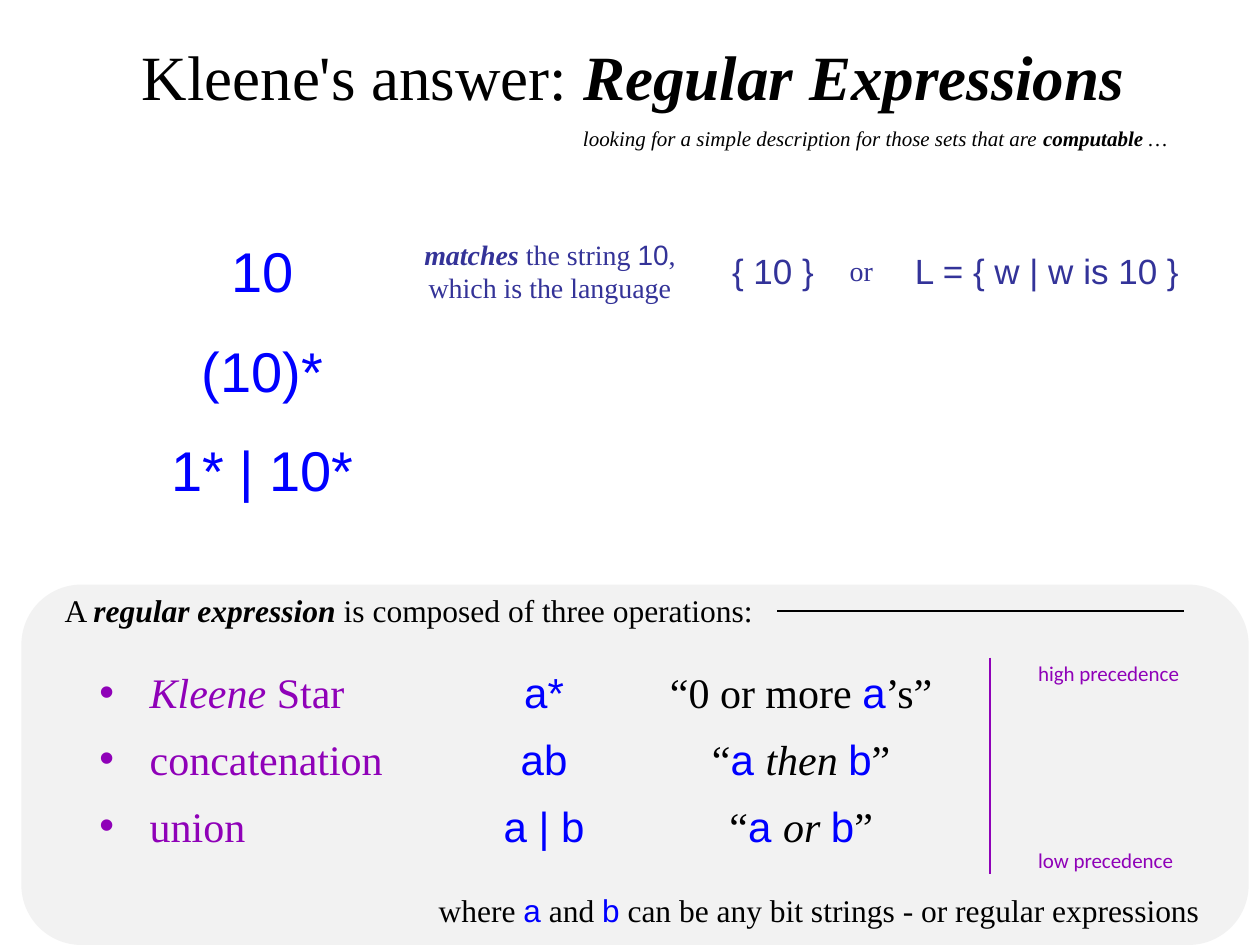
from lxml import etree
from pptx import Presentation
from pptx.dml.color import RGBColor
from pptx.enum.shapes import MSO_CONNECTOR, MSO_SHAPE
from pptx.enum.text import MSO_ANCHOR, MSO_AUTO_SIZE, PP_ALIGN
from pptx.oxml.ns import qn
from pptx.util import Inches, Pt

COLORS = {
    "panel": "F2F2F2",
    "text": "000000",
    "code": "0000FF",
    "operation": "8F01B8",
    "language": "333399",
    "match": "343398",
}
SERIF, SANS, LABEL = "Times New Roman", "Arial", "Calibri"

# style: (font, colour, bold, italic)
STYLES = {
    "plain": (SERIF, "text", False, False),
    "italic": (SERIF, "text", False, True),
    "strong": (SERIF, "text", True, True),
    "code": (SANS, "code", False, False),
    "operation": (SERIF, "operation", False, False),
    "operation italic": (SERIF, "operation", False, True),
    "precedence": (LABEL, "operation", False, False),
    "language": (SANS, "language", False, False),
    "match": (SERIF, "match", False, False),
    "match strong": (SERIF, "match", True, True),
    "match code": (SANS, "match", False, False),
}


def rgb(name):
    return RGBColor.from_string(COLORS[name])


def write(frame, pieces, size, align=PP_ALIGN.CENTER, anchor=MSO_ANCHOR.MIDDLE, wrap=True):
    """Fill a text frame with one paragraph of (text, style) pieces."""
    frame.word_wrap = wrap
    frame.auto_size = MSO_AUTO_SIZE.NONE
    frame.vertical_anchor = anchor
    paragraph = frame.paragraphs[0]
    paragraph.alignment = align
    for text, style in pieces:
        run = paragraph.add_run()
        run.text = text
        font = run.font
        font.name, color, font.bold, font.italic = STYLES[style]
        font.size = Pt(size)
        font.color.rgb = rgb(color)
    return paragraph


def add_text(slide, left, top, width, height, pieces, size, **layout):
    box = slide.shapes.add_textbox(Inches(left), Inches(top), Inches(width), Inches(height))
    return write(box.text_frame, pieces, size, **layout)


def add_rule(slide, start, end, color, weight):
    rule = slide.shapes.add_connector(MSO_CONNECTOR.STRAIGHT, *map(Inches, start + end))
    rule.line.color.rgb = rgb(color)
    rule.line.width = Pt(weight)
    etree.SubElement(rule._element.spPr, qn("a:effectLst"))


def add_bullet_and_tabs(paragraph, tabs):
    """Give a paragraph a bullet and tab stops of (position, alignment)."""
    properties = paragraph._p.get_or_add_pPr()
    properties.set("marL", "0")
    properties.set("indent", "0")
    etree.SubElement(properties, qn("a:buFont"), typeface=SANS)
    etree.SubElement(properties, qn("a:buChar"), char="•")
    stops = etree.SubElement(properties, qn("a:tabLst"))
    for position, alignment in tabs:
        etree.SubElement(stops, qn("a:tab"), pos=str(Inches(position)), algn=alignment)


def add_heading(slide, left, top):
    title = slide.shapes.title
    title.left, title.top = Inches(left), Inches(top)
    title.width, title.height = Inches(8.51), Inches(0.7)
    write(title.text_frame,
          [("Kleene's answer: ", "plain"), ("Regular Expressions", "strong")],
          36, anchor=MSO_ANCHOR.TOP)
    add_text(slide, left + 3.75, top + 0.7, 4.85, 0.3, [
        ("looking for a simple description for those sets that are ", "italic"),
        ("computable ", "strong"),
        ("…", "italic"),
    ], 12, wrap=False)


def add_examples(slide, left, top):
    """Place the column of expressions and the language of the first one."""
    for row, expression in enumerate(["10", "(10)*", "1* | 10*"]):
        add_text(slide, left, top + row * 0.79, 1.65, 0.63,
                 [(expression, "code")], 32, wrap=False)
    add_text(slide, left + 1.92, top, 2.37, 0.64, [
        ("matches", "match strong"),
        (" the string ", "match"),
        ("10", "match code"),
        (", which is the language", "match"),
    ], 16)
    add_text(slide, left + 4.45, top + 0.1, 0.85, 0.43, [("{ 10 }", "language")], 20, wrap=False)
    add_text(slide, left + 5.38, top + 0.13, 0.39, 0.37, [("or", "match")], 16, wrap=False)
    add_text(slide, left + 5.9, top + 0.1, 2.3, 0.43,
             [("L = { w | w is 10 }", "language")], 20, wrap=False)


def add_operations(slide, left, top):
    """Place the three operations, one bulleted row each, in tabbed columns."""
    operations = [
        [("\t", "operation"), ("Kleene", "operation italic"), (" Star\t", "operation"),
         ("a*", "code"), ("\t“0 or more ", "plain"), ("a", "code"), ("’s”", "plain")],
        [("\tconcatenation\t", "operation"), ("ab", "code"), ("\t“", "plain"),
         ("a ", "code"), ("then ", "italic"), ("b", "code"), ("”", "plain")],
        [("\tunion\t", "operation"), ("a | b", "code"), ("\t“", "plain"),
         ("a ", "code"), ("or ", "italic"), ("b", "code"), ("”", "plain")],
    ]
    columns = [(0.4, "l"), (3.53, "ctr"), (5.57, "ctr")]
    for row, pieces in enumerate(operations):
        paragraph = add_text(slide, left, top + row * 0.53, 7.1, 0.5, pieces, 24,
                             align=PP_ALIGN.LEFT)
        add_bullet_and_tabs(paragraph, columns)


def add_precedence(slide, left, top):
    add_rule(slide, (left, top), (left, top + 1.72), "operation", 1)
    for label, offset in [("high precedence", -0.03), ("low precedence", 1.46)]:
        add_text(slide, left + 0.28, top + offset, 1.4, 0.3, [(label, "precedence")], 12,
                 align=PP_ALIGN.LEFT, wrap=False)


def add_definition(slide, left, top, width, height):
    panel = slide.shapes.add_shape(
        MSO_SHAPE.ROUNDED_RECTANGLE, Inches(left), Inches(top), Inches(width), Inches(height))
    panel.shadow.inherit = False
    panel.fill.solid()
    panel.fill.fore_color.rgb = rgb("panel")
    panel.line.fill.background()

    add_text(slide, left + 0.16, top, 5.83, 0.4, [
        ("A ", "plain"),
        ("regular expression", "strong"),
        (" is composed of three operations:", "plain"),
    ], 18)
    add_rule(slide, (left + 6, top + 0.21), (left + 9.23, top + 0.21), "text", 0.75)
    add_operations(slide, left + 0.52, top + 0.6)
    add_precedence(slide, left + 7.69, top + 0.58)
    add_text(slide, left + 3.01, top + 2.38, 6.44, 0.4, [
        ("where ", "plain"),
        ("a", "code"),
        (" and ", "plain"),
        ("b", "code"),
        (" can be any bit strings - or regular expressions", "plain"),
    ], 18, align=PP_ALIGN.RIGHT)


def main():
    deck = Presentation()
    deck.slide_width, deck.slide_height = Inches(10), Inches(7.5)
    slide = deck.slides.add_slide(deck.slide_layouts[5])
    add_heading(slide, 0.77, 0.25)
    add_examples(slide, 1.26, 1.83)
    add_definition(slide, 0.17, 4.64, 9.74, 2.86)
    deck.save("out.pptx")


if __name__ == "__main__":
    main()
